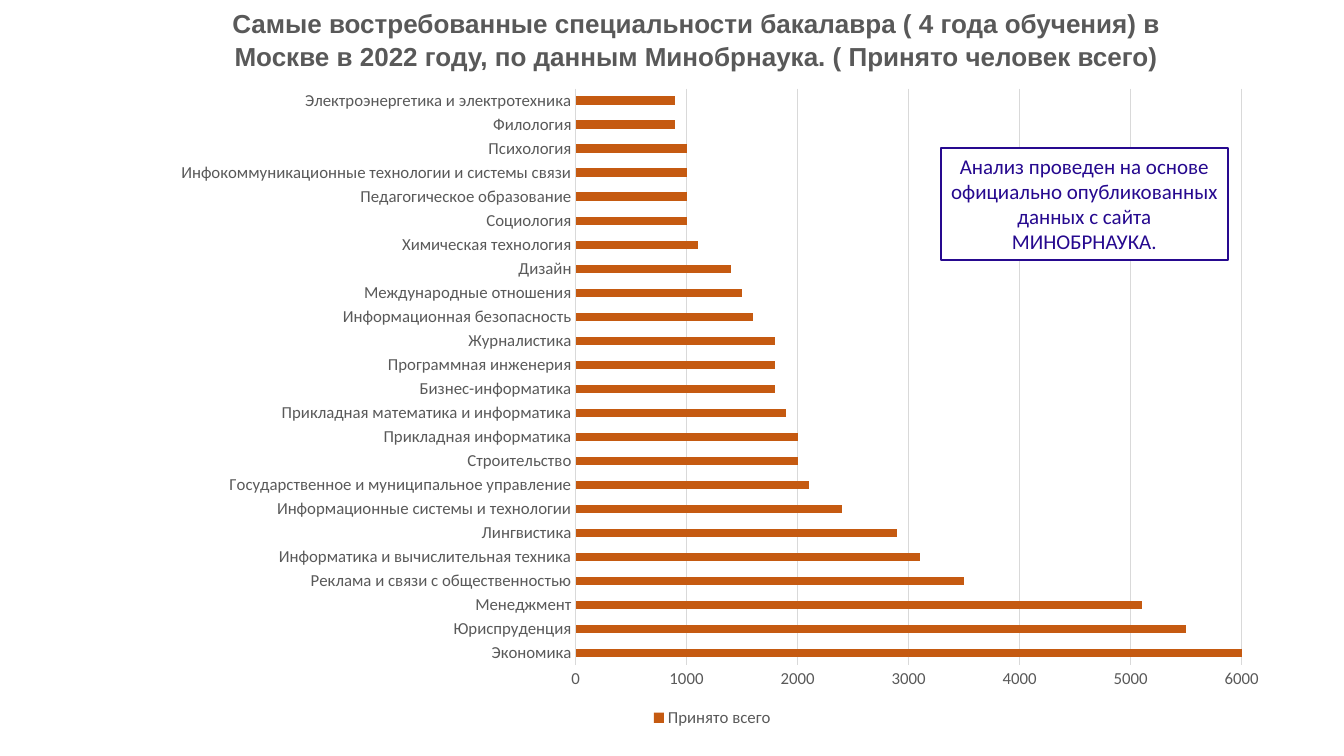
from lxml import etree
from pptx import Presentation
from pptx import util as u
from pptx.chart.data import CategoryChartData
from pptx.dml.color import RGBColor
from pptx.enum import chart as charts, shapes, text
from pptx.oxml.ns import qn

GREY, GRID, ORANGE, VIOLET, WHITE = "595959", "D9D9D9", "C55A11", "26098F", "FFFFFF"

ADMISSIONS = [
    ("Экономика", 6000),
    ("Юриспруденция", 5500),
    ("Менеджмент", 5100),
    ("Реклама и связи с общественностью", 3500),
    ("Информатика и вычислительная техника", 3100),
    ("Лингвистика", 2900),
    ("Информационные системы и технологии", 2400),
    ("Государственное и муниципальное управление", 2100),
    ("Строительство", 2000),
    ("Прикладная информатика", 2000),
    ("Прикладная математика и информатика", 1900),
    ("Бизнес-информатика", 1800),
    ("Программная инженерия", 1800),
    ("Журналистика", 1800),
    ("Информационная безопасность", 1600),
    ("Международные отношения", 1500),
    ("Дизайн", 1400),
    ("Химическая технология", 1100),
    ("Социология", 1000),
    ("Педагогическое образование", 1000),
    ("Инфокоммуникационные технологии и системы связи", 1000),
    ("Психология", 1000),
    ("Филология", 900),
    ("Электроэнергетика и электротехника", 900),
]


def paint(color_format, color):
    color_format.rgb = RGBColor.from_string(color)


def write(box, words, color, **font):
    """Fill the box with one centred, wrapped paragraph."""
    box.text_frame.word_wrap = True
    para = box.text_frame.paragraphs[0]
    para.alignment = text.PP_ALIGN.CENTER
    span = para.add_run()
    span.text = words
    paint(span.font.color, color)
    for name, value in font.items():
        setattr(span.font, name, value)
    return para


deck = Presentation()
deck.slide_width, deck.slide_height = u.Inches(13.33), u.Inches(7.5)
page = deck.slides.add_slide(deck.slide_layouts[6])

# Chart of admissions
data = CategoryChartData()
data.categories = [name for name, count in ADMISSIONS]
data.add_series("Принято всего", [count for name, count in ADMISSIONS])
chart = page.shapes.add_chart(
    charts.XL_CHART_TYPE.BAR_CLUSTERED,
    u.Inches(1.01), u.Inches(0.73), u.Inches(12.11), u.Inches(6.53), data,
).chart
chart.has_title = False
chart.has_legend = True
chart.legend.position = charts.XL_LEGEND_POSITION.BOTTOM
chart.legend.include_in_layout = False

bars = chart.plots[0]
bars.gap_width = 182
bars.vary_by_categories = False
fill = bars.series[0].format.fill
fill.solid()
paint(fill.fore_color, ORANGE)

names, counts = chart.category_axis, chart.value_axis
for axis in (names, counts):
    axis.major_tick_mark = axis.minor_tick_mark = charts.XL_TICK_MARK.NONE
counts.minimum_scale, counts.maximum_scale, counts.major_unit = 0, 6500, 1000
counts.has_major_gridlines = True
counts.format.line.fill.background()
for line in (names.format.line, counts.major_gridlines.format.line):
    paint(line.color, GRID)
    line.width = u.Pt(0.75)
for font in (names.tick_labels.font, counts.tick_labels.font, chart.legend.font):
    font.name, font.size = "Calibri", u.Pt(12)
    paint(font.color, GREY)

# Fixed inner plot area, as fractions of the chart
plot_area = bars._element.getparent()
for old in plot_area.findall(qn("c:layout")):
    plot_area.remove(old)
layout = etree.Element(qn("c:layout"))
plot_area.insert(0, layout)
manual = etree.SubElement(layout, qn("c:manualLayout"))
settings = {"layoutTarget": "inner", "xMode": "edge", "yMode": "edge",
            "x": 0.388, "y": 0.023, "w": 0.591, "h": 0.876}
for name, value in settings.items():
    etree.SubElement(manual, qn("c:" + name), val=str(value))

# Heading
heading = page.shapes.add_textbox(u.Inches(1.75), 0, u.Inches(10.31), u.Inches(0.73))
para = write(
    heading,
    "Самые востребованные специальности бакалавра ( 4 года обучения) в Москве "
    "в 2022 году, по данным Минобрнаука. ( Принято человек всего)",
    GREY, name="Arial", size=u.Pt(18.6), bold=True,
)
para.line_spacing = 1.07

# Note on the data
note = page.shapes.add_shape(
    shapes.MSO_SHAPE.RECTANGLE,
    u.Inches(9.33), u.Inches(1.47), u.Inches(2.85), u.Inches(1.11),
)
note.shadow.inherit = False
note.fill.solid()
paint(note.fill.fore_color, WHITE)
paint(note.line.color, VIOLET)
note.line.width = u.Pt(1.25)
note.text_frame.vertical_anchor = text.MSO_ANCHOR.TOP
write(
    note,
    "Анализ проведен на основе официально опубликованных данных с сайта МИНОБРНАУКА.",
    VIOLET, name="Calibri", size=u.Pt(15),
)

deck.save("out.pptx")
